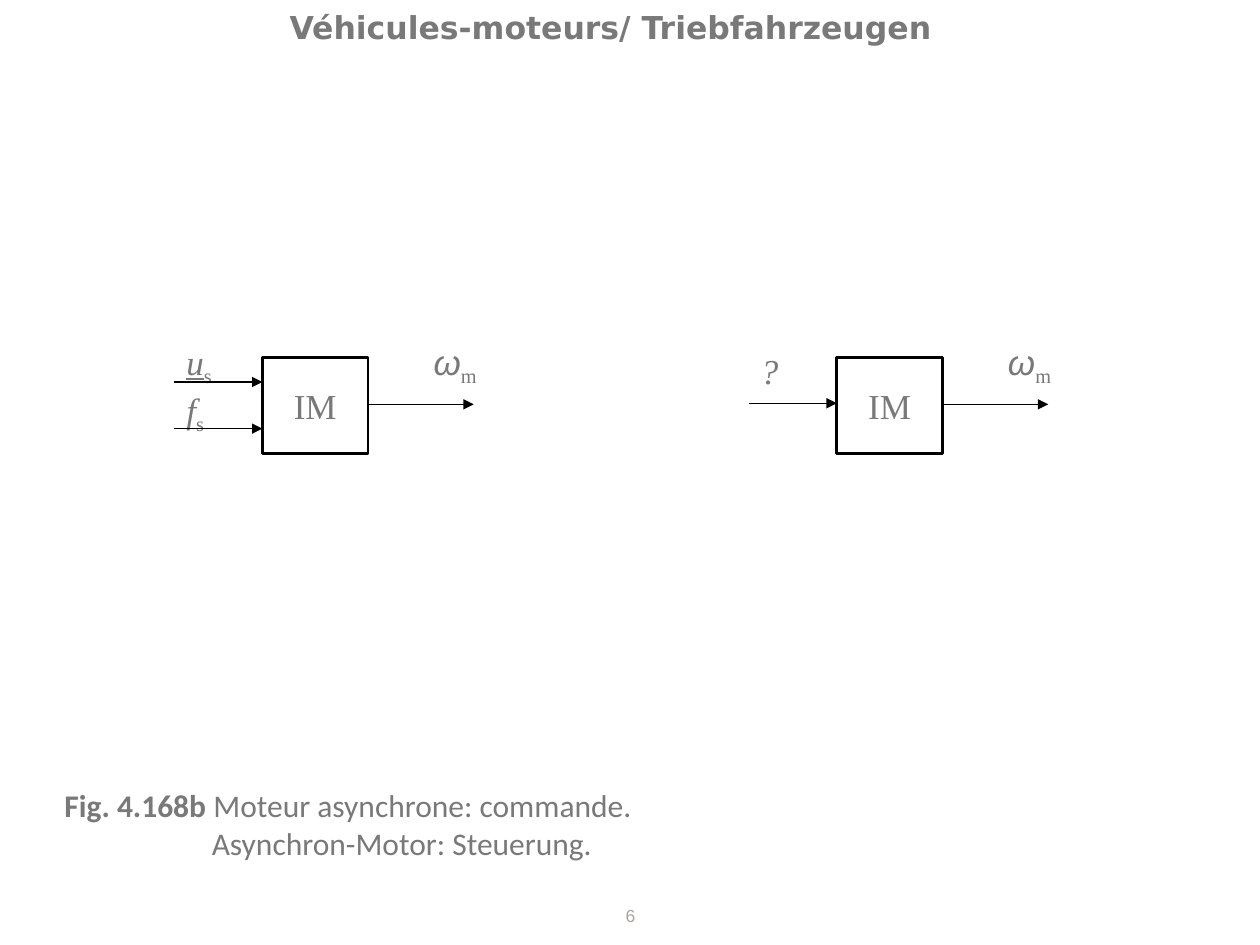
from lxml import etree
from pptx import Presentation
from pptx import util as u
from pptx.dml.color import RGBColor
from pptx.enum import shapes, text
from pptx.oxml import ns

GREY = RGBColor(0x79, 0x79, 0x79)
PALE = RGBColor(0xAC, 0xA3, 0x9A)
BLACK = RGBColor(0, 0, 0)
WHITE = RGBColor(0xFF, 0xFF, 0xFF)

SERIF = {"name": "Times New Roman", "size": u.Pt(20)}
VARIABLE = {**SERIF, "italic": True}
PHASOR = {**VARIABLE, "underline": True}
OMEGA = {**VARIABLE, "name": "Arial"}
TITLE = {"name": "DejaVu Sans", "size": u.Pt(18), "bold": True}
CAPTION = {"name": "Calibri", "size": u.Pt(18), "bold": False}
NUMBER = {"name": "Arial", "size": u.Pt(10)}


class Sheet:
    color = GREY

    def __init__(self, prs):
        self.s = prs.slides.add_slide(prs.slide_layouts[5])

    def place(self, sp, x, y, w, h):
        box = {"left": x, "top": y, "width": w, "height": h}
        for key, value in box.items():
            setattr(sp, key, u.Cm(value))

    def run(self, p, words, style, color=None, subscript=False):
        r = p.add_run()
        r.text = words
        for key, value in style.items():
            setattr(r.font, key, value)
        r.font.color.rgb = color or self.color
        if subscript:
            r.font._element.set("baseline", "-25000")

    def frame(self, sp, anchor=text.MSO_ANCHOR.TOP, **margins):
        tf = sp.text_frame
        settings = {"word_wrap": True, "auto_size": text.MSO_AUTO_SIZE.NONE,
                    "vertical_anchor": anchor, **margins}
        for key, value in settings.items():
            setattr(tf, key, value)
        return tf

    def title(self, words, *box):
        sp = self.s.shapes.title
        self.place(sp, *box)
        p = self.frame(sp).paragraphs[0]
        p.alignment = text.PP_ALIGN.CENTER
        self.run(p, words, TITLE)

    def textbox(self, parent, box, **settings):
        sp = parent.add_textbox(*(u.Cm(v) for v in box))
        return self.frame(sp, **settings)

    def symbol(self, parent, x, y, letter, style, index=""):
        tf = self.textbox(parent, (x, y, 1.42, 1.45), margin_right=0)
        p = tf.paragraphs[0]
        self.run(p, letter, style)
        if index:
            self.run(p, index, SERIF, subscript=True)

    def arrow(self, parent, x1, x2, y):
        c = parent.add_connector(shapes.MSO_CONNECTOR.STRAIGHT,
                                 u.Cm(x1), u.Cm(y), u.Cm(x2), u.Cm(y))
        c.line.color.rgb = BLACK
        c.line.width = u.Pt(0.75)
        etree.SubElement(c.line._get_or_add_ln(), ns.qn("a:tailEnd"), type="triangle")
        etree.SubElement(c._element.spPr, ns.qn("a:effectLst"))

    def block(self, parent, words, *box):
        sp = parent.add_shape(shapes.MSO_SHAPE.RECTANGLE, *(u.Cm(v) for v in box))
        sp.shadow.inherit = False
        sp.fill.solid()
        sp.fill.fore_color.rgb = WHITE
        sp.line.color.rgb = BLACK
        sp.line.width = u.Pt(1.5)
        p = self.frame(sp, text.MSO_ANCHOR.MIDDLE).paragraphs[0]
        p.alignment = text.PP_ALIGN.CENTER
        self.run(p, words, SERIF)

    def motor(self, x, inputs):
        g = self.s.shapes.add_group_shape().shapes
        left, right = x + 1.78, x + 3.91
        self.block(g, "IM", left, 7.21, right - left, 1.93)
        self.arrow(g, right, right + 2.13, 8.15)
        self.symbol(g, x + 4.98, 6.73, "ω", OMEGA, "m")
        for label_y, arrow_y, letter, style, index in inputs:
            self.symbol(g, x, label_y, letter, style, index)
            self.arrow(g, x, left, arrow_y)

    def caption(self, *box):
        tf = self.textbox(self.s.shapes, box, margin_left=0, margin_right=0)
        p = tf.paragraphs[0]
        self.run(p, "Fig. 4.168b ", {**CAPTION, "bold": True})
        self.run(p, "Moteur asynchrone: commande.", CAPTION)
        p = tf.add_paragraph()
        p._p.get_or_add_pPr().set("marL", str(u.Cm(2.97)))
        self.run(p, "Asynchron-Motor: Steuerung.", CAPTION)

    def page_number(self, words, *box):
        tf = self.textbox(self.s.shapes, box, anchor=text.MSO_ANCHOR.MIDDLE)
        p = tf.paragraphs[0]
        p.alignment = text.PP_ALIGN.CENTER
        self.run(p, words, NUMBER, PALE)


def main():
    prs = Presentation()
    prs.slide_width, prs.slide_height = u.Cm(25.4), u.Cm(19.05)
    sheet = Sheet(prs)
    sheet.title("Véhicules-moteurs/ Triebfahrzeugen", 2.11, 0.03, 20.4, 1.55)
    sheet.motor(15.09, [(6.93, 8.13, "?", VARIABLE, "")])
    sheet.motor(3.51, [(6.73, 7.7, "u", PHASOR, "s"),
                       (7.7, 8.64, "f", VARIABLE, "s")])
    sheet.caption(1.3, 15.72, 23.19, 1.78)
    sheet.page_number("6", 11.91, 18.06, 1.6, 0.79)
    prs.save("out.pptx")


if __name__ == "__main__":
    main()
